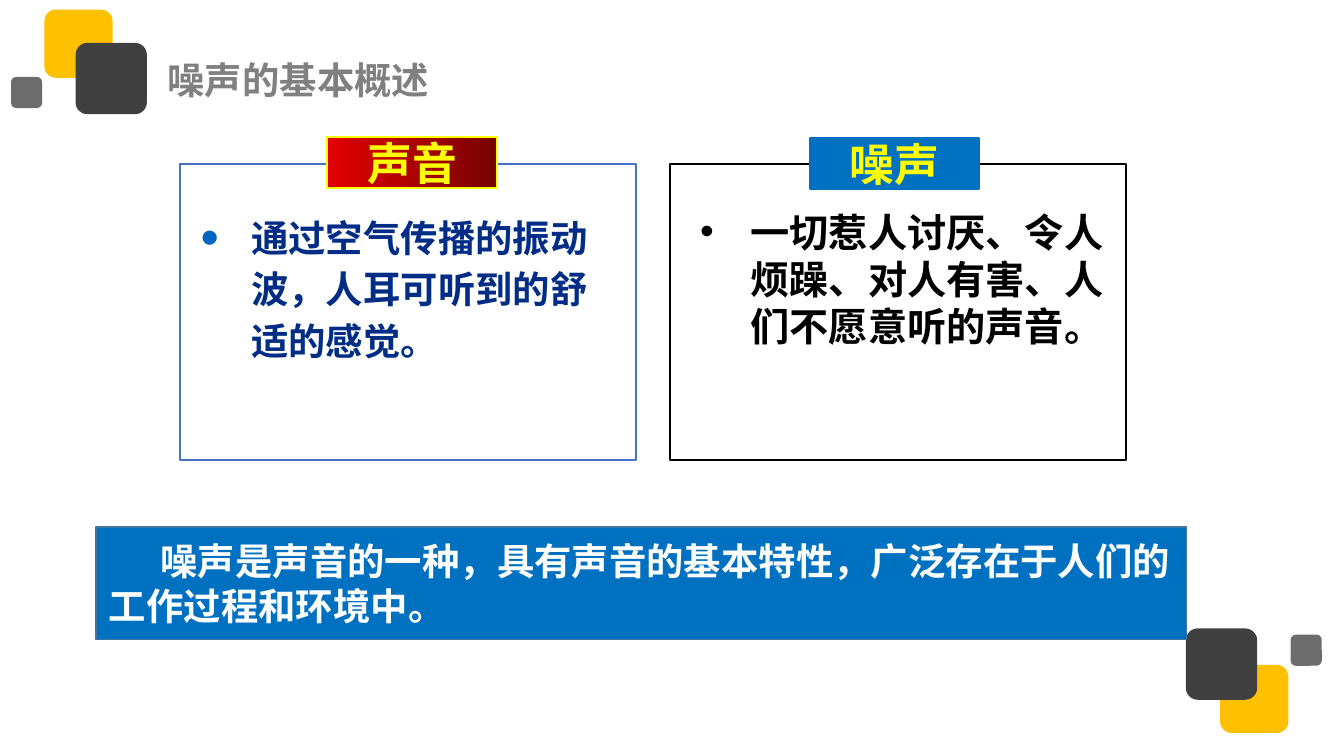
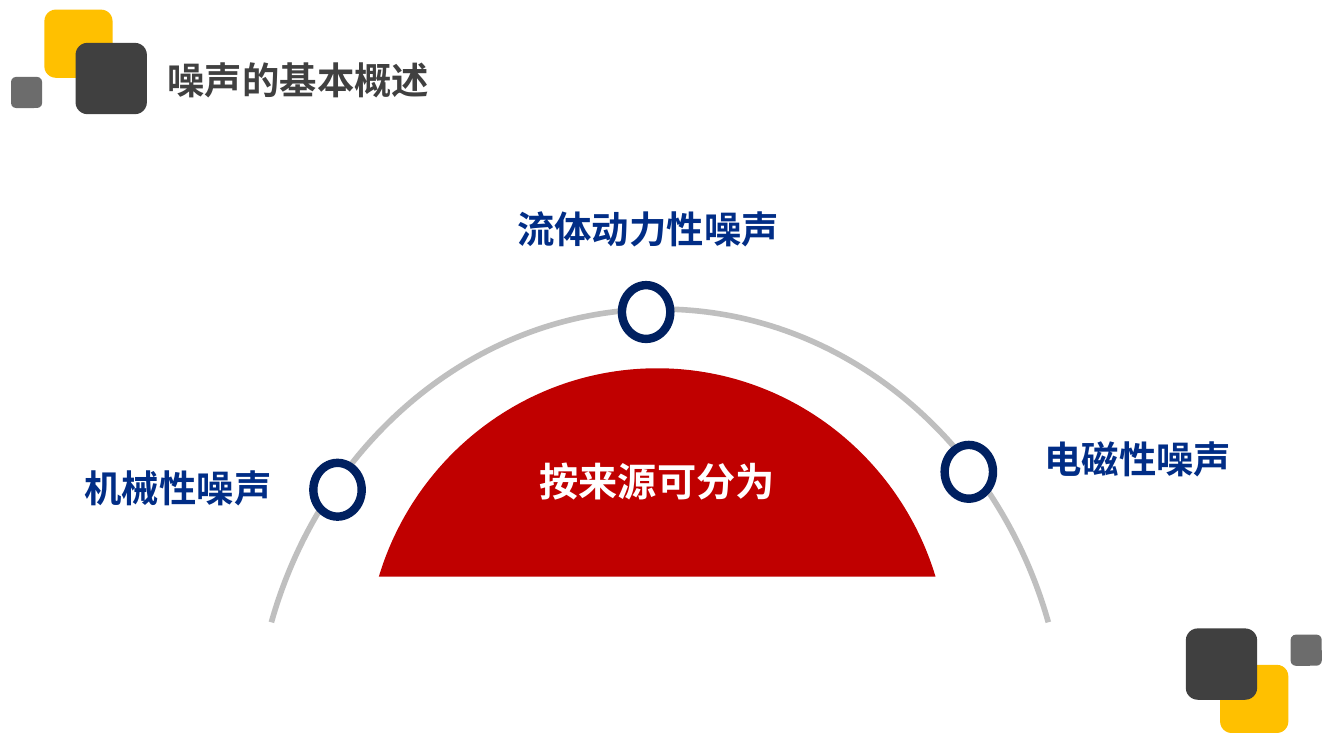
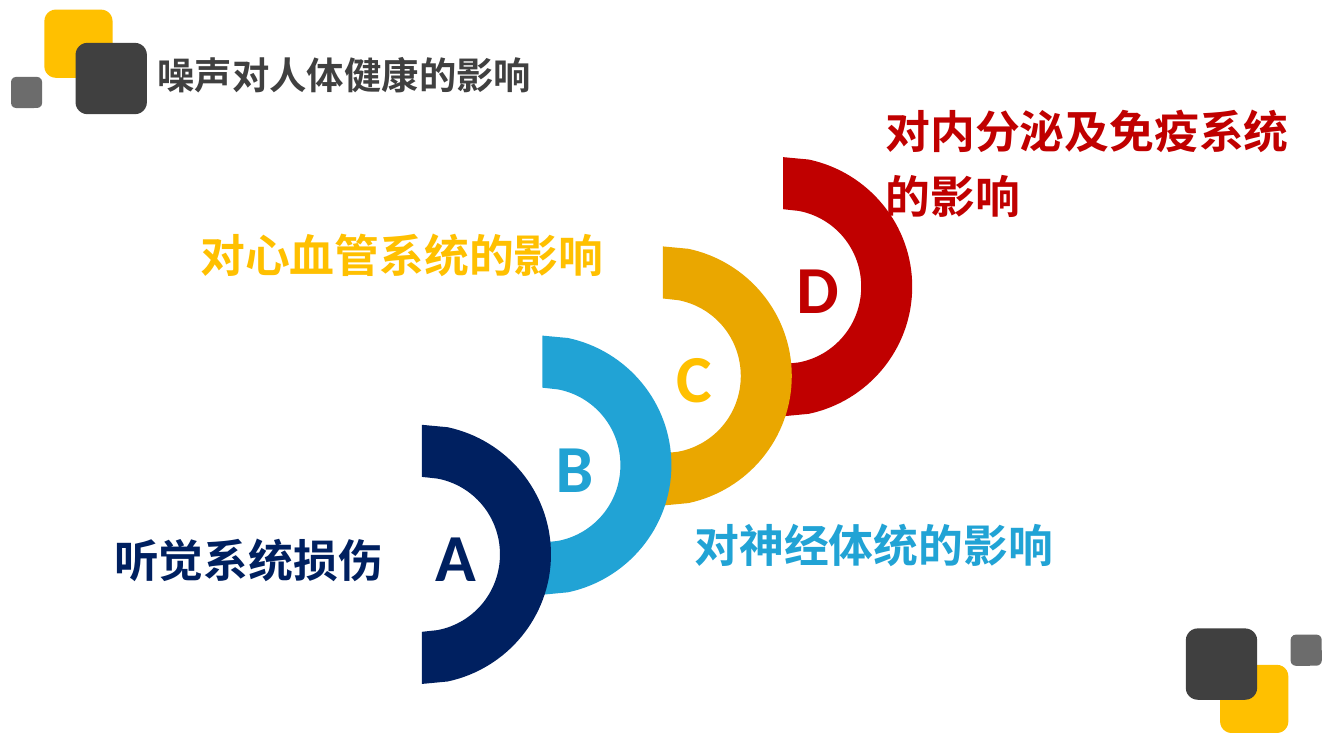
from lxml import etree
from pptx import Presentation
from pptx.dml.color import RGBColor
from pptx.enum import shapes as kinds, text as t
from pptx.oxml.ns import qn
from pptx.util import Pt

HEX = {
    "gold": "FFC000", "dark": "404040", "gray": "808080", "silver": "BFBFBF",
    "white": "FFFFFF", "black": "000000", "yellow": "FFFF00", "red": "C00000",
    "blue": "0070C0", "frame": "4472C4", "edge": "43739E", "navy": "002060",
    "sky": "21A3D5", "teal": "21A2D3", "amber": "EAA700", "bullet": "0563C1",
    "ink": ("012D86", "0E2557"), "flame": ("E30000", "760303"),
}
HAN = "Noto Sans CJK SC"
RECT = kinds.MSO_SHAPE.RECTANGLE
LEFT, MID, JUST = t.PP_ALIGN.LEFT, t.PP_ALIGN.CENTER, t.PP_ALIGN.JUSTIFY
TOP, HALF = t.MSO_ANCHOR.TOP, t.MSO_ANCHOR.MIDDLE

# Corner marks: left, top, side, colour, opacity in percent
MARKS = [(23.8, 5.2, 36.5, "gold", 100), (40.5, 23, 38.2, "dark", 100),
         (5.9, 41.2, 16.7, "dark", 77)]
TURN = (714, 397.9)  # a mark and its turned twin add up to this

TITLES = [("噪声的基本概述", "gray", 82.6, 27),
          ("噪声的基本概述", "dark", 82.6, 27),
          ("噪声对人体健康的影响", "dark", 77.1, 24.5)]

PANELS = [
    dict(box=(96.5, 87.8, 244.4, 158.6), line="frame",
         tag="声音", spot=(175.4, 73.4, 90.7, 27.6), fill="flame", rim="yellow",
         body="通过空气传播的振动波，人耳可听到的舒适的感觉。",
         room=(102.5, 108.5, 233.3, 70.6), size=20, ink="ink", gap=1.15,
         bullet=True),
    dict(box=(359, 87.8, 244.4, 158.6), line="black",
         tag="噪声", spot=(433.9, 73.9, 90.7, 27.6), fill="blue", rim="blue",
         body="一切惹人讨厌、令人烦躁、对人有害、人们不愿意听的声音。",
         room=(370.1, 108.5, 227.5, 70.6), size=21, ink="black", gap=1,
         bullet=False),
]
BANNER = "噪声是声音的一种，具有声音的基本特性，广泛存在于人们的工作过程和环境中。"

# Left halves of the curves, up to the top point
DOME = [(203, 308.9), (222.5, 244.1), (282.2, 197.3), (352.1, 197.3)]
ARCH = [(145.4, 333.4), (172.8, 236.2), (255.6, 165.6), (353.5, 165.6)]
CORE = "按来源可分为"
DOTS = [(333.2, 152.8), (167.9, 248), (506.1, 238.4)]
SOURCES = [("机械性噪声", (38.2, 245.5, 134.6, 31.7)),
           ("流体动力性噪声", (270, 107, 164.2, 31.7)),
           ("电磁性噪声", (552.4, 230.4, 134.6, 31.7))]

# Letter, ring colour, letter colour, label, label box, label colour
RINGS = [
    ("A", "navy", "navy", "听觉系统损伤", (54, 265, 190, 64), "navy"),
    ("B", "sky", "teal", "对神经体统的影响", (365, 257, 303, 64), "sky"),
    ("C", "amber", "gold", "对心血管系统的影响", (100.2, 101.7, 238.3, 64), "gold"),
    ("D", "red", "red", "对内分泌及免疫系统的影响", (467.3, 52.6, 241.2, 64), "red"),
]
FIRST, STEP = (226.1, 227.6), (64.5, -47.8)
# Top halves of a ring's outer and inner edge
OUTER = [(0, 0), (13.7, 1.3), (45.4, 8), (69.1, 36), (69.1, 69.4)]
INNER = [(0, 27.9), (8.3, 28.8), (27.5, 32.4), (41.8, 49.2), (41.8, 69.4)]


def put(obj, **vals):
    for key, val in vals.items():
        setattr(obj, key, val)


def rgb(name):
    return RGBColor.from_string(HEX[name])


def paint(fill, name):
    """Fill with a plain colour, a left-to-right blend, or nothing."""
    if name is None:
        fill.background()
    elif isinstance(HEX[name], tuple):
        fill.gradient()
        fill.gradient_angle = 0
        for stop, code in zip(fill.gradient_stops, HEX[name]):
            stop.color.rgb = RGBColor.from_string(code)
    else:
        fill.solid()
        fill.fore_color.rgb = rgb(name)


def style(shape, fill=None, line=None, width=1):
    shape.shadow.inherit = False
    paint(shape.fill, fill)
    paint(shape.line.fill, line)
    if line:
        shape.line.width = Pt(width)
    return shape


def place(shape, box):
    put(shape, **dict(zip(("left", "top", "width", "height"), map(Pt, box))))


def block(pool, kind, box, **look):
    return style(pool.add_shape(kind, *map(Pt, box)), **look)


def say(shape, words, size, ink, font=HAN, anchor=TOP, pad=(7.2, 3.6, 7.2, 3.6),
        wrap=True, align=LEFT, gap=1):
    frame = shape.text_frame
    put(frame, text=words, auto_size=t.MSO_AUTO_SIZE.NONE, word_wrap=wrap,
        vertical_anchor=anchor)
    sides = ("margin_left", "margin_top", "margin_right", "margin_bottom")
    put(frame, **dict(zip(sides, map(Pt, pad))))
    para = frame.paragraphs[0]
    put(para, alignment=align, line_spacing=gap, space_before=Pt(0))
    run = para.runs[0]
    put(run.font, size=Pt(size), bold=True, name=font)
    paint(run.font.fill, ink)
    etree.SubElement(run.font._element, qn("a:ea"), typeface=HAN)
    return para


def label(slide, words, box, size, ink, **form):
    say(slide.shapes.add_textbox(*map(Pt, box)), words, size, ink, **form)


def fold(half, axis):
    """Add the mirror of a half outline; axis 0 flips x, 1 flips y."""
    end = half[-1][axis]
    twin = [[2 * end - v if i == axis else v for i, v in enumerate(point)]
            for point in half[-2::-1]]
    return half + twin


def trace(slide, points, steps, close=True, **look):
    """Draw an outline; steps has L for a line, C for a curve of three points."""
    spots = [(Pt(x), Pt(y)) for x, y in points]
    pen = slide.shapes.build_freeform(*spots[0])
    pen.add_line_segments(spots[1:], close=close)
    shape = pen.convert_to_shape()
    lines = iter(shape.element.findall(".//" + qn("a:lnTo")))
    for step in steps:
        first = next(lines)
        if step == "C":
            first.tag = qn("a:cubicBezTo")
            for _ in range(2):
                line = next(lines)
                first.append(line[0])
                line.getparent().remove(line)
    return style(shape, **look)


def mark(deck, slide):
    """Put the corner marks on the master, so every slide shows them."""
    group = slide.shapes.add_group_shape()
    for turned in (False, True):
        for x, y, side, ink, alpha in MARKS:
            if turned:
                x, y = TURN[0] - x - side, TURN[1] - y - side
            tile = block(group.shapes, kinds.MSO_SHAPE.ROUNDED_RECTANGLE,
                         (x, y, side, side), fill=ink)
            if alpha < 100:
                color = tile.element.spPr.find(".//" + qn("a:srgbClr"))
                etree.SubElement(color, qn("a:alpha"), val=str(alpha * 1000))
    for num, node in enumerate(group.element.iter(qn("p:cNvPr")), 100):
        node.set("id", str(num))
    deck.slide_master.shapes.element.append(group.element)


def define(slide):
    for panel, body in zip(PANELS, list(slide.placeholders)[1:]):
        block(slide.shapes, RECT, panel["box"], fill="white", line=panel["line"])
        slide.shapes.element.append(body.element)  # text above its panel
        place(body, panel["room"])
        pad = (5, 2.9, 5, 2.9)
        para = say(body, panel["body"], panel["size"], panel["ink"],
                   gap=panel["gap"], pad=pad)
        if panel["bullet"]:
            props = para._p.get_or_add_pPr()
            color = etree.SubElement(props, qn("a:buClr"))
            etree.SubElement(color, qn("a:srgbClr"), val=HEX["bullet"])
            etree.SubElement(props, qn("a:buSzPct"), val="140000")
            etree.SubElement(props, qn("a:buChar"), char="•")
        tag = block(slide.shapes, RECT, panel["spot"],
                    fill=panel["fill"], line=panel["rim"])
        say(tag, panel["tag"], 24, "yellow", font="Arial", anchor=HALF,
            pad=pad, wrap=False, align=MID)
    banner = block(slide.shapes, RECT, (51.3, 282.2, 584.4, 60.5),
                   fill="blue", line="edge")
    para = say(banner, BANNER, 20, "white", anchor=HALF)
    para._p.get_or_add_pPr().set("indent", str(Pt(27.6)))


def sort(slide):
    dome = trace(slide, fold(DOME, 0), "CC", fill="red")
    say(dome, CORE, 21, "white", anchor=HALF, pad=(8.6, 13, 8.6, 3.6), align=MID)
    trace(slide, fold(ARCH, 0), "CC", close=False, line="silver", width=3)
    for x, y in DOTS:
        block(slide.shapes, kinds.MSO_SHAPE.OVAL, (x, y, 25.9, 28.8),
              fill="white", line="navy", width=4.5)
    for words, box in SOURCES:
        label(slide, words, box, 20, "ink")


def harm(slide):
    edge = fold(OUTER, 1) + fold(INNER, 1)[::-1]
    for i, (letter, fill, ink, *_) in reversed(list(enumerate(RINGS))):
        left, top = [a + i * b for a, b in zip(FIRST, STEP)]
        points = [(left + x, top + y) for x, y in edge]
        ring = trace(slide, points, "LCCLLLCCL", fill=fill)
        say(ring, letter, 36, ink, font="Calibri", anchor=HALF, align=JUST)
    for *_, words, box, ink in RINGS:
        label(slide, words, box, 24, ink, font="Calibri", anchor=HALF, gap=1.2)


def main():
    deck = Presentation()
    put(deck, slide_width=Pt(720), slide_height=Pt(405))
    for (words, ink, x, y), draw, layout in zip(TITLES, (define, sort, harm), (3, 5, 5)):
        slide = deck.slides.add_slide(deck.slide_layouts[layout])
        title = slide.shapes.title
        place(title, (x, y, 234.7, 31.7))
        say(title, words, 20, ink)
        draw(slide)
    mark(deck, slide)
    deck.save("out.pptx")


if __name__ == "__main__":
    main()
